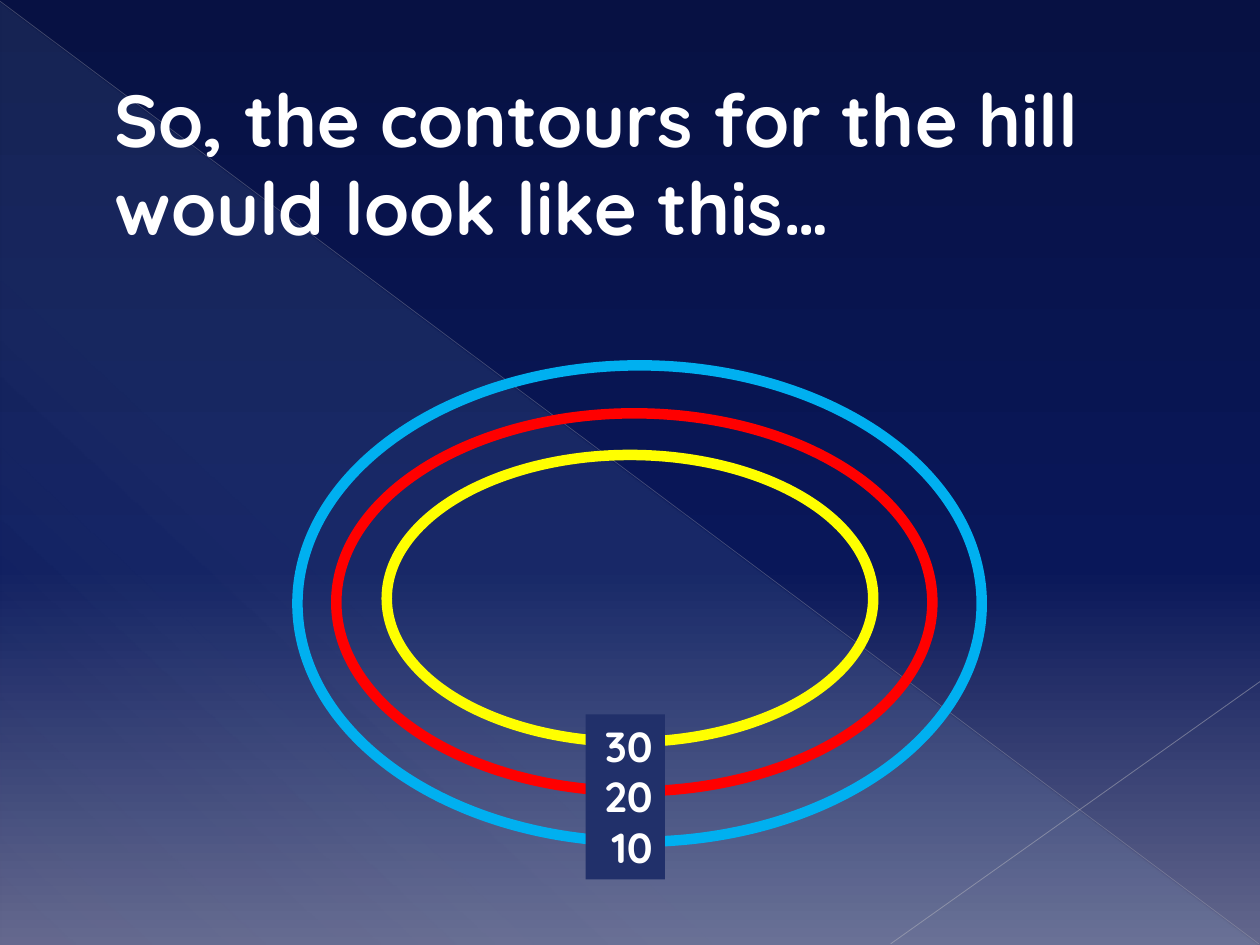
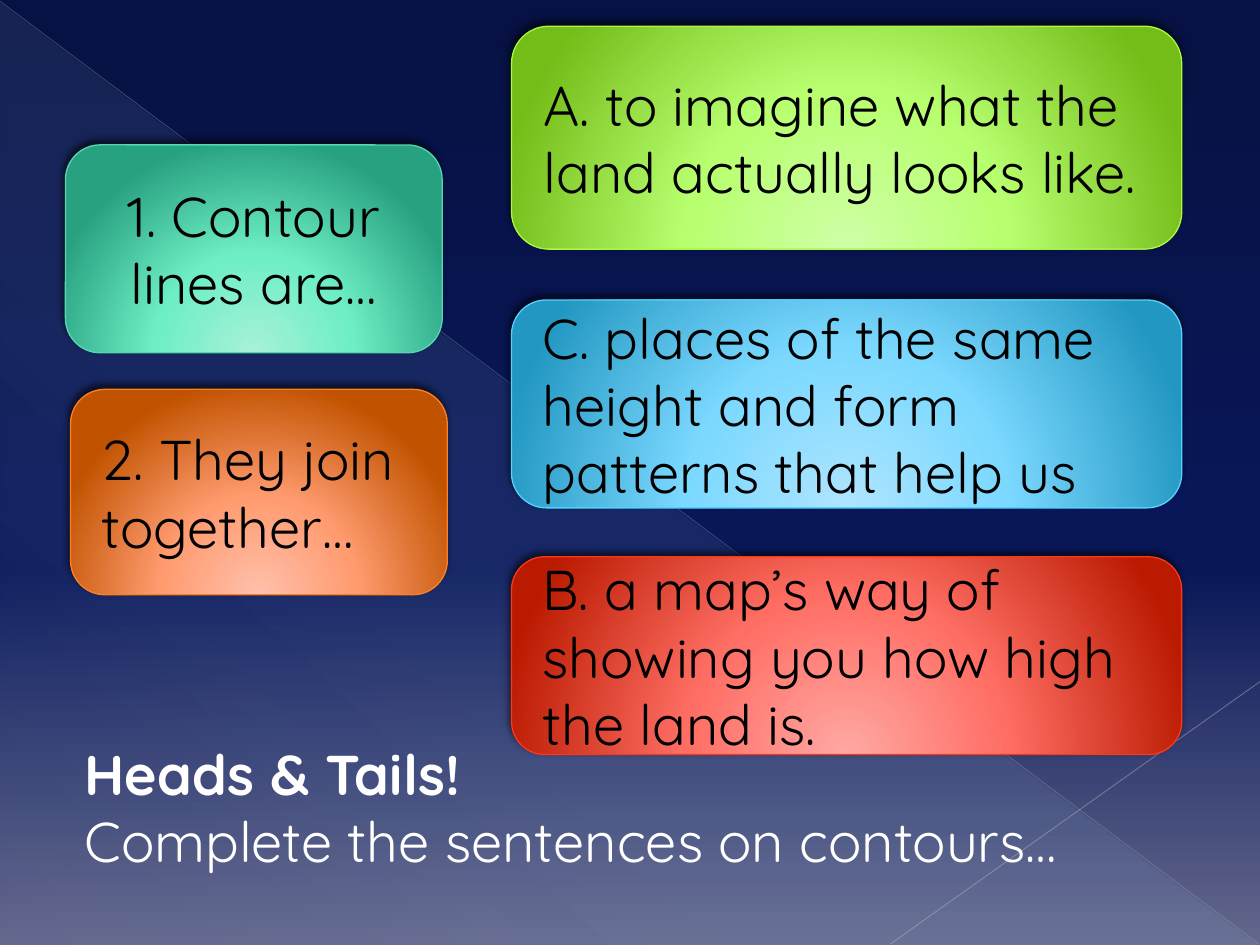
"""Build two slides about contour lines: a hill diagram and a sentence-matching game."""
from lxml.etree import SubElement
from pptx import Presentation
from pptx.dml.color import RGBColor
from pptx.enum.shapes import MSO_CONNECTOR, MSO_SHAPE
from pptx.enum.text import MSO_ANCHOR, MSO_AUTO_SIZE, PP_ALIGN
from pptx.oxml.ns import qn
from pptx.util import Pt

FONT = "Quicksand"
COLOURS = {
    "night": "071143", "navy": "091759", "dusk": "63678C", "haze": "B4DCFA",
    "diagonal": "B3B4BB", "corner": "BCBCC2", "label": "21306A",
    "white": "FFFFFF", "black": "000000",
    "yellow": "FFFF00", "red": "FF0000", "blue": "00B0F0",
}
CARD_COLOURS = {
    "mint": ("A8F1D8", "6DEEC6", "28A180", "52D9B4"),
    "orange": ("FFC0AC", "FF9B6F", "C15300", "FF8021"),
    "sky": ("AFE5FF", "7BD8FF", "2197C1", "52D2FF"),
    "lime": ("CFFFA7", "B7FF6E", "74BC18", "A9F943"),
    "coral": ("FFA8A4", "FF6E64", "BA1A00", "FF3716"),
}


def set_gradient(properties, stops, angle=None):
    """Replace a solid fill by stops of (percent, colour, opacity), linear or radial."""
    solid = properties.find(qn("a:solidFill"))
    gradient = properties.makeelement(qn("a:gradFill"), {"rotWithShape": "1"})
    properties.replace(solid, gradient)
    stop_list = SubElement(gradient, qn("a:gsLst"))
    for position, colour, opacity in stops:
        stop = SubElement(stop_list, qn("a:gs"), pos=str(position * 1000))
        shade = SubElement(stop, qn("a:srgbClr"), val=colour)
        if opacity < 100:
            SubElement(shade, qn("a:alpha"), val=str(opacity * 1000))
    if angle is not None:
        SubElement(gradient, qn("a:lin"), ang=str(angle * 60000), scaled="0")
    else:
        circle = SubElement(gradient, qn("a:path"), path="circle")
        SubElement(circle, qn("a:fillToRect"), l="50000", t="155000", r="50000", b="-55000")


def style_text(paragraph, size, colour, bold=False):
    """Set the font of every run in a paragraph."""
    for span in paragraph.runs:
        span.font.name = FONT
        span.font.size = Pt(size)
        span.font.bold = bold
        span.font.color.rgb = RGBColor.from_string(COLOURS[colour])


deck = Presentation()
deck.slide_width, deck.slide_height = Pt(720), Pt(540)
contour_page, game_page = [deck.slides.add_slide(deck.slide_layouts[6]) for _ in range(2)]

for page in (contour_page, game_page):
    page.background.fill.solid()
    set_gradient(
        page.element.find(".//" + qn("p:bgPr")),
        [(0, COLOURS["night"], 100), (60, COLOURS["navy"], 100), (100, COLOURS["dusk"], 100)],
        angle=90,
    )
    triangle = page.shapes.add_shape(
        MSO_SHAPE.RIGHT_TRIANGLE, Pt(0.5), Pt(1.5), Pt(718.5), Pt(538.5))
    triangle.shadow.inherit = False
    triangle.fill.solid()
    set_gradient(
        triangle.element.spPr,
        [(position, COLOURS["haze"], opacity) for position, opacity in ((0, 10), (70, 8), (100, 1))],
        angle=133,
    )
    triangle.line.fill.background()

    for start_x, start_y, end_x, end_y, colour, width, opacity in (
        (0, 0.7, 719.3, 539.3, "diagonal", 0.39, 35),
        (720, 389.5, 509, 539.3, "corner", 0.47, 45),
    ):
        ray = page.shapes.add_connector(
            MSO_CONNECTOR.STRAIGHT, Pt(start_x), Pt(start_y), Pt(end_x), Pt(end_y))
        ray.line.color.rgb = RGBColor.from_string(COLOURS[colour])
        ray.line.width = Pt(width)
        shade = ray.element.spPr.find(".//" + qn("a:srgbClr"))
        SubElement(shade, qn("a:alpha"), val=str(opacity * 1000))
        SubElement(ray.element.spPr, qn("a:effectLst"))

for left, top, width, height, colour in (
    (221, 260, 278, 164, "yellow"),
    (192.2, 236.2, 340.6, 216, "red"),
    (170, 208.8, 391, 272.2, "blue"),
):
    contour = contour_page.shapes.add_shape(
        MSO_SHAPE.OVAL, Pt(left), Pt(top), Pt(width), Pt(height))
    contour.shadow.inherit = False
    contour.fill.background()
    contour.line.color.rgb = RGBColor.from_string(COLOURS[colour])
    contour.line.width = Pt(6)

heights = contour_page.shapes.add_shape(
    MSO_SHAPE.RECTANGLE, Pt(334.6), Pt(408.2), Pt(45.4), Pt(94.4))
heights.shadow.inherit = False
heights.fill.solid()
heights.fill.fore_color.rgb = RGBColor.from_string(COLOURS["label"])
heights.line.fill.background()
heights.text_frame.text = "30\n20\n10"
heights.text_frame.auto_size = MSO_AUTO_SIZE.SHAPE_TO_FIT_TEXT
heights.text_frame.vertical_anchor = MSO_ANCHOR.TOP
for para in heights.text_frame.paragraphs:
    para.alignment = PP_ALIGN.RIGHT
    style_text(para, 24, "white", bold=True)

for left, top, width, height, colour, align, text in (
    (37.4, 82.8, 215.3, 118.8, "mint", PP_ALIGN.CENTER, "1. Contour lines are…"),
    (40.3, 222.5, 215.3, 117.4, "orange", PP_ALIGN.LEFT, "2. They join together…"),
    (292.3, 171.4, 383, 118.8, "sky", PP_ALIGN.LEFT,
     "C. places of the same height and form patterns that help us"),
    (292.3, 15, 383, 127.4, "lime", PP_ALIGN.LEFT,
     "A. to imagine what the land actually looks like."),
    (292.3, 318.2, 383, 113, "coral", PP_ALIGN.LEFT,
     "B. a map’s way of showing you how high the land is."),
):
    card = game_page.shapes.add_shape(
        MSO_SHAPE.ROUNDED_RECTANGLE, Pt(left), Pt(top), Pt(width), Pt(height))
    light, middle, dark, edge = CARD_COLOURS[colour]
    card.fill.solid()
    set_gradient(card.element.spPr, [(0, light, 100), (46, middle, 100), (100, dark, 100)])
    card.line.color.rgb = RGBColor.from_string(edge)
    card.line.width = Pt(0.75)
    card.shadow.inherit = False
    shadow = SubElement(
        card.element.spPr.find(qn("a:effectLst")), qn("a:outerShdw"),
        blurRad=str(Pt(4)), dist=str(Pt(3)), dir=str(245 * 60000), rotWithShape="0")
    shade = SubElement(shadow, qn("a:srgbClr"), val=COLOURS["black"])
    SubElement(shade, qn("a:alpha"), val="60000")
    card.text_frame.text = text
    card.text_frame.vertical_anchor = MSO_ANCHOR.MIDDLE
    if align == PP_ALIGN.LEFT:
        card.text_frame.margin_left = Pt(12.2)
    para = card.text_frame.paragraphs[0]
    para.alignment = align
    style_text(para, 32, "black")

for page, left, top, width, height, size, text in (
    (contour_page, 20.2, 37.4, 648, 110.2, 42,
     "So, the contours for the hill would look like this…"),
    (game_page, 2.9, 366.5, 683.3, 188.6, 32,
     "Heads & Tails!\vComplete the sentences on contours…"),
):
    title = page.shapes.add_textbox(Pt(left), Pt(top), Pt(width), Pt(height))
    title.text_frame.word_wrap = True
    title.text_frame.vertical_anchor = MSO_ANCHOR.MIDDLE
    title.text_frame.margin_left = Pt(45.4)
    para = title.text_frame.paragraphs[0]
    para.text = text
    style_text(para, size, "white")
    para.runs[0].font.bold = True

deck.save("out.pptx")
